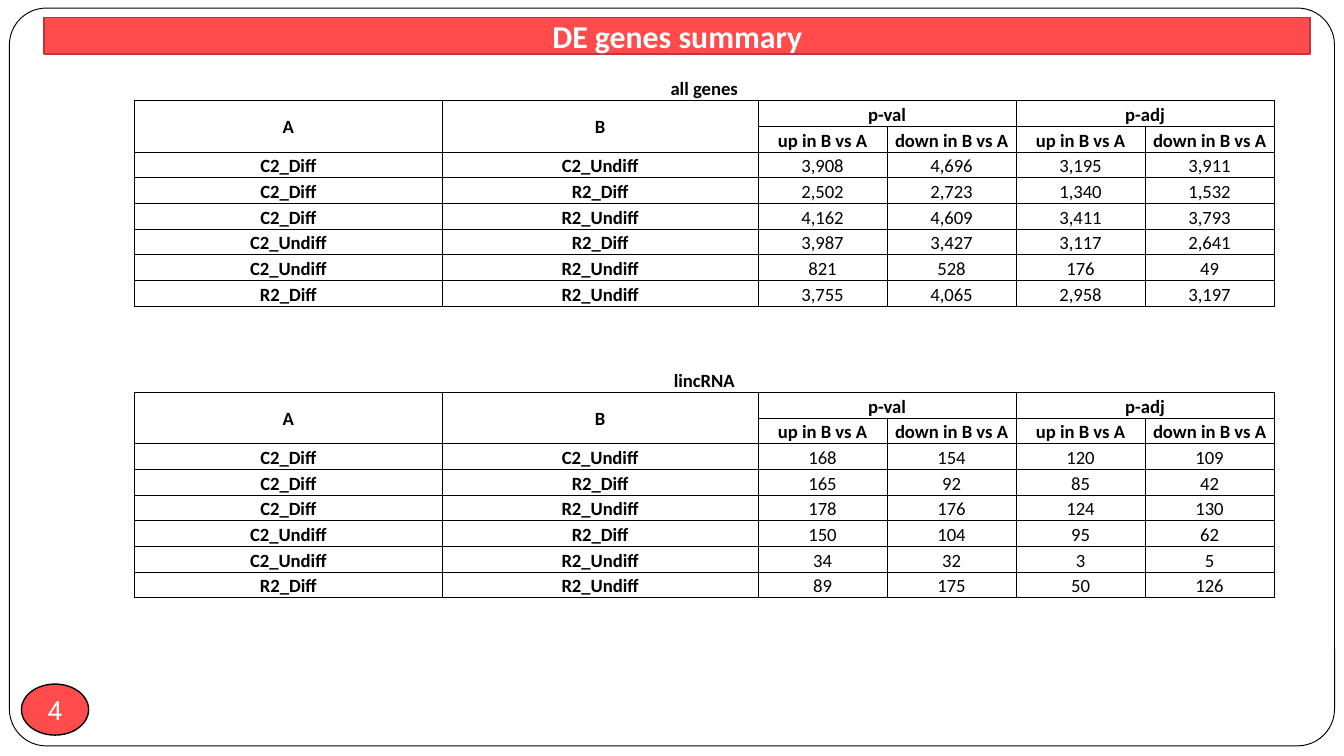
from lxml import etree
from pptx import Presentation
from pptx.dml.color import RGBColor
from pptx.enum.shapes import MSO_SHAPE
from pptx.enum.text import MSO_ANCHOR, MSO_AUTO_SIZE, PP_ALIGN
from pptx.oxml import parse_xml
from pptx.oxml.ns import nsdecls, qn
from pptx.util import Inches, Pt

ROUNDED, ELLIPSE = MSO_SHAPE.ROUNDED_RECTANGLE, MSO_SHAPE.OVAL
MIDDLE, BOTTOM = MSO_ANCHOR.MIDDLE, MSO_ANCHOR.BOTTOM
CENTER, NO_FIT = PP_ALIGN.CENTER, MSO_AUTO_SIZE.NONE
GRID = 0.1
COLUMN_WIDTHS = [22.9, 23.5, 9.6, 9.6, 9.6, 9.6]
ROW_HEIGHT = 1.91
MERGES = [(0, 0, 0, 5), (1, 0, 2, 0), (1, 1, 2, 1), (1, 2, 1, 3), (1, 4, 1, 5)]
HEADINGS = [
    ["A", "B", "p-val", "", "p-adj", ""],
    ["", ""] + ["up in B vs A", "down in B vs A"] * 2,
]
PAIRS = [
    ("C2_Diff", "C2_Undiff"),
    ("C2_Diff", "R2_Diff"),
    ("C2_Diff", "R2_Undiff"),
    ("C2_Undiff", "R2_Diff"),
    ("C2_Undiff", "R2_Undiff"),
    ("R2_Diff", "R2_Undiff"),
]
ALL_GENES = [
    (3908, 4696, 3195, 3911),
    (2502, 2723, 1340, 1532),
    (4162, 4609, 3411, 3793),
    (3987, 3427, 3117, 2641),
    (821, 528, 176, 49),
    (3755, 4065, 2958, 3197),
]
LINC_RNA = [
    (168, 154, 120, 109),
    (165, 92, 85, 42),
    (178, 176, 124, 130),
    (150, 104, 95, 62),
    (34, 32, 3, 5),
    (89, 175, 50, 126),
]


def color(value):
    """Turn a hex string into a colour."""
    return RGBColor.from_string(value)


def units(*steps):
    """Turn grid steps into lengths."""
    return [Inches(step * GRID) for step in steps]


class Page:
    """Holds the style and the current slide."""

    red, dark_red, black, white = "FF4B4B", "BD3737", "000000", "FFFFFF"
    body_font, number_font = "Calibri", "Roboto"

    def __init__(self, deck):
        """Start a slide with the title-only layout."""
        self.slide = deck.slides.add_slide(deck.slide_layouts[5])
        self.shapes = self.slide.shapes

    def paint(self, shape, fill, line, width):
        """Set the fill and outline of a shape."""
        shape.fill.solid()
        shape.fill.fore_color.rgb = color(fill)
        shape.line.color.rgb = color(line)
        shape.line.width = Pt(width)

    def label(self, frame, text, size, font, ink, bold=False):
        """Put one centred paragraph in a text frame."""
        frame.text = text
        para = frame.paragraphs[0]
        para.alignment = CENTER
        para.font.size, para.font.name, para.font.bold = Pt(size), font, bold
        para.font.color.rgb = color(ink)

    def shape(self, kind, place, fill, width):
        """Add a preset shape with a black outline."""
        shape = self.shapes.add_shape(kind, *units(*place))
        shape.shadow.inherit = False
        self.paint(shape, fill, self.black, width)
        return shape

    def frame(self, place):
        """Add the rounded border of the page."""
        border = self.shape(ROUNDED, place, self.white, 0.5)
        border.adjustments[0] = 0.05

    def badge(self, place, number):
        """Add the page number in an ellipse."""
        frame = self.shape(ELLIPSE, place, self.red, 0.75).text_frame
        frame.margin_left = frame.margin_right = 0
        frame.margin_top = frame.margin_bottom = 0
        frame.word_wrap = False
        frame.vertical_anchor = MIDDLE
        self.label(frame, number, 14, self.number_font, self.white)

    def title(self, place, text):
        """Turn the title placeholder into a rounded bar on top."""
        bar = self.shapes.title
        bar.left, bar.top, bar.width, bar.height = units(*place)
        outline = etree.SubElement(bar._element.spPr, qn("a:prstGeom"), prst="roundRect")
        etree.SubElement(outline, qn("a:avLst"))
        self.paint(bar, self.red, self.dark_red, 1)
        frame = bar.text_frame
        frame.auto_size = NO_FIT
        frame.vertical_anchor = MIDDLE
        self.label(frame, text, 17, self.body_font, self.white, True)
        self.shapes._spTree.append(bar._element)

    def borders(self, cell, sides):
        """Draw the named sides of a cell and hide the others."""
        properties = cell._tc.get_or_add_tcPr()
        for side in "LRTB":
            ink = f'<a:solidFill><a:srgbClr val="{self.black}"/></a:solidFill>'
            paint = ink if side in sides else "<a:noFill/>"
            properties.append(parse_xml(
                f'<a:ln{side} {nsdecls("a")} w="{Pt(0.5)}">{paint}</a:ln{side}>'))

    def table(self, left, top, caption, counts):
        """Add a captioned table of gene counts."""
        numbers = [[f"{count:,}" for count in line] for line in counts]
        body = [[*pair, *line] for pair, line in zip(PAIRS, numbers)]
        rows = [[caption] + [""] * 5, *HEADINGS, *body]
        size = sum(COLUMN_WIDTHS), len(rows) * ROW_HEIGHT
        table = self.shapes.add_table(
            len(rows), len(COLUMN_WIDTHS), *units(left, top, *size)).table
        table.first_row = table.horz_banding = False
        for column, width in zip(table.columns, units(*COLUMN_WIDTHS)):
            column.width = width
        for r, row in enumerate(rows):
            for c, text in enumerate(row):
                cell = table.cell(r, c)
                cell.margin_left = cell.margin_right = cell.margin_top = Inches(0.01)
                cell.margin_bottom = 0
                cell.vertical_anchor = MIDDLE if r == 1 and c < 2 else BOTTOM
                self.borders(cell, "LRTB" if r else "B")
                cell.fill.background()
                bold = r < 3 or c < 2
                self.label(cell.text_frame, text, 10, self.body_font, self.black, bold)
        for top_row, first, bottom_row, last in MERGES:
            table.cell(top_row, first).merge(table.cell(bottom_row, last))


def main():
    """Build the slide and save it."""
    deck = Presentation()
    deck.slide_width, deck.slide_height = units(100, 56.25)
    page = Page(deck)
    page.frame((0.7, 0.6, 98.6, 54.9))
    page.badge((1.6, 50.9, 5, 3.8), "4")
    page.title((3.3, 1.3, 94.2, 2.7), "DE genes summary")
    page.table(10, 5.6, "all genes", ALL_GENES)
    page.table(10, 27.3, "lincRNA", LINC_RNA)
    deck.save("out.pptx")


if __name__ == "__main__":
    main()
